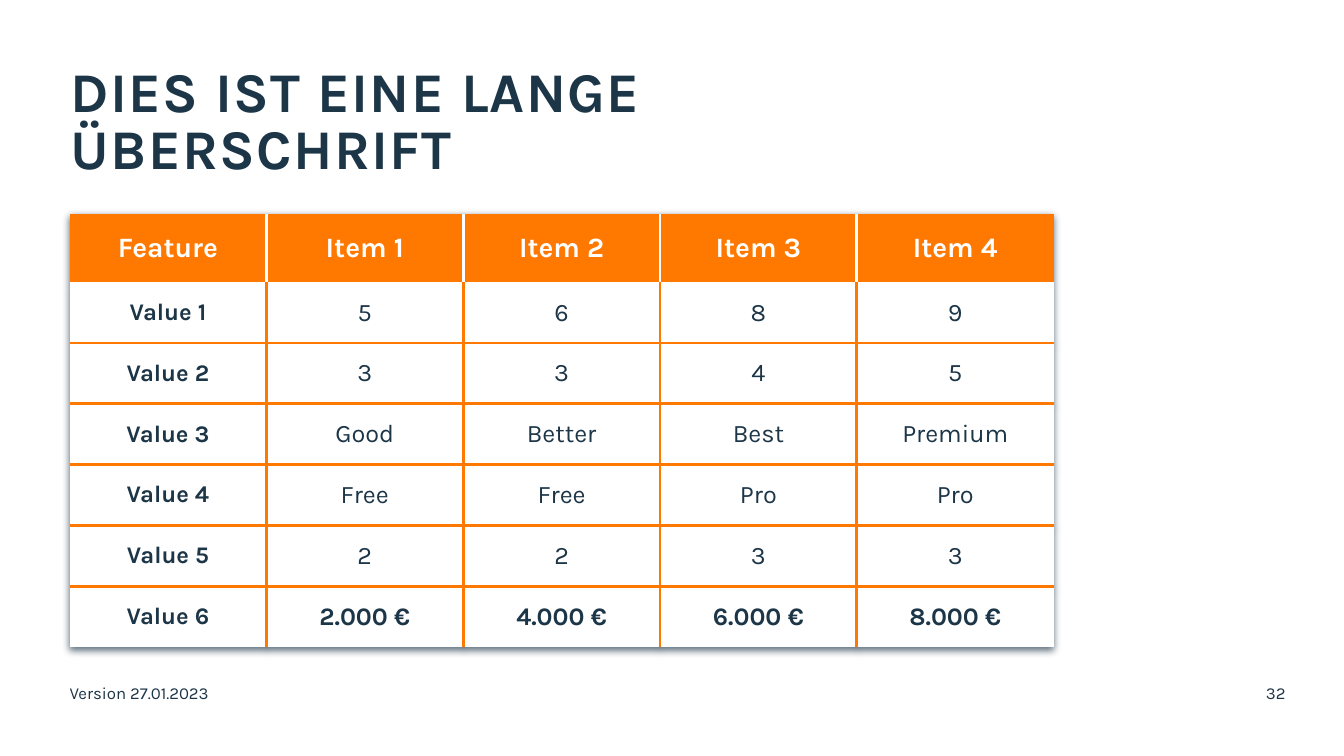
from lxml import etree
from pptx import Presentation
from pptx.dml.color import RGBColor
from pptx.enum.text import MSO_ANCHOR as Anchor, PP_ALIGN as Align
from pptx.oxml import parse_xml
from pptx.oxml.ns import nsdecls, qn
from pptx.util import Inches, Pt

NAVY = RGBColor(0x1C, 0x35, 0x47)
ORANGE = RGBColor(0xFF, 0x78, 0x00)
WHITE = RGBColor(0xFF, 0xFF, 0xFF)
FONT = "Karla"
BORDER_WIDTH = Pt(2.25)

FEATURES = [
    ("Feature", "Item 1", "Item 2", "Item 3", "Item 4"),
    ("Value 1", "5", "6", "8", "9"),
    ("Value 2", "3", "3", "4", "5"),
    ("Value 3", "Good", "Better", "Best", "Premium"),
    ("Value 4", "Free", "Free", "Pro", "Pro"),
    ("Value 5", "2", "2", "3", "3"),
    ("Value 6", "2.000 €", "4.000 €", "6.000 €", "8.000 €"),
]


def write_text(frame, text, size=12, color=NAVY, bold=False, align=Align.LEFT,
               line_spacing=None, tracking=None):
    """Write one formatted paragraph; tracking is in points."""
    para = frame.paragraphs[0]
    para.alignment = align
    if line_spacing:
        para.line_spacing = line_spacing
    span = para.add_run()
    span.text = text
    font = span.font
    font.name, font.size, font.bold = FONT, Pt(size), bold
    font.color.rgb = color
    if tracking:
        span._r.get_or_add_rPr().set("spc", str(tracking * 100))


def clear_margins(frame):
    frame.margin_left = frame.margin_right = 0
    frame.margin_top = frame.margin_bottom = 0
    frame.word_wrap = True
    frame.vertical_anchor = Anchor.TOP


def add_title(page, left, top, width, height):
    title = page.shapes.title
    title.left, title.top = Inches(left), Inches(top)
    title.width, title.height = Inches(width), Inches(height)
    clear_margins(title.text_frame)
    write_text(title.text_frame, "DIES IST EINE LANGE ÜBERSCHRIFT", size=40,
               bold=True, line_spacing=0.85, tracking=1)


def add_footer_text(page, text, left, top, width, height, align=Align.LEFT):
    box = page.shapes.add_textbox(Inches(left), Inches(top), Inches(width), Inches(height))
    clear_margins(box.text_frame)
    write_text(box.text_frame, text, align=align)


def set_borders(cell, colors):
    """Draw the left, right, top and bottom borders; None means no line."""
    properties = cell._tc.get_or_add_tcPr()
    for index, (side, color) in enumerate(zip("LRTB", colors)):
        line = etree.Element(qn(f"a:ln{side}"), w=str(BORDER_WIDTH))
        if color is None:
            etree.SubElement(line, qn("a:noFill"))
        else:
            fill = etree.SubElement(line, qn("a:solidFill"))
            etree.SubElement(fill, qn("a:srgbClr"), val=str(color))
        properties.insert(index, line)


def add_table_shadow(table):
    properties = table._tbl.tblPr
    properties.insert(0, parse_xml(
        f'<a:effectLst {nsdecls("a")}>'
        '<a:outerShdw blurRad="63500" dist="25400" dir="5400000" algn="t" rotWithShape="0">'
        f'<a:srgbClr val="{NAVY}"><a:alpha val="70000"/></a:srgbClr>'
        '</a:outerShdw></a:effectLst>'))


def format_cell(cell, text, row, column):
    is_header = row == 0
    last_row, last_column = len(FEATURES) - 1, len(FEATURES[0]) - 1
    cell.fill.solid()
    cell.fill.fore_color.rgb = ORANGE if is_header else WHITE
    cell.margin_left = cell.margin_right = Inches(0.2)
    cell.margin_top = cell.margin_bottom = 0
    cell.vertical_anchor = Anchor.MIDDLE
    divider = WHITE if is_header else ORANGE
    set_borders(cell, (
        divider if column > 0 else None,
        divider if column < last_column else None,
        ORANGE if row > 1 else None,
        ORANGE if 0 < row < last_row else None,
    ))
    write_text(cell.text_frame, text,
               size=20 if is_header else 17 if column == 0 else 18,
               color=WHITE if is_header else NAVY,
               bold=row in (0, last_row) or column == 0, align=Align.CENTER)


def add_feature_table(page, left, top, width, height, header_height=0.68):
    rows, columns = len(FEATURES), len(FEATURES[0])
    table = page.shapes.add_table(rows, columns, Inches(left), Inches(top),
                                  Inches(width), Inches(height)).table
    table.horz_banding = False
    add_table_shadow(table)
    for column in table.columns:
        column.width = Inches(width / columns)
    for index, row in enumerate(table.rows):
        row.height = Inches((height - header_height) / (rows - 1) if index else header_height)
    for row, values in enumerate(FEATURES):
        for column, text in enumerate(values):
            format_cell(table.cell(row, column), text, row, column)


def main():
    deck = Presentation()
    deck.slide_width, deck.slide_height = Inches(13.33), Inches(7.5)
    page = deck.slides.add_slide(deck.slide_layouts[5])
    add_title(page, 0.7, 0.66, 8.2, 1.12)
    add_feature_table(page, 0.69, 2.12, 9.76, 4.3)
    add_footer_text(page, "Version 27.01.2023", 0.69, 6.77, 8.23, 0.4)
    add_footer_text(page, "32", 10.6, 6.77, 2.15, 0.4, align=Align.RIGHT)
    deck.save("out.pptx")


if __name__ == "__main__":
    main()
